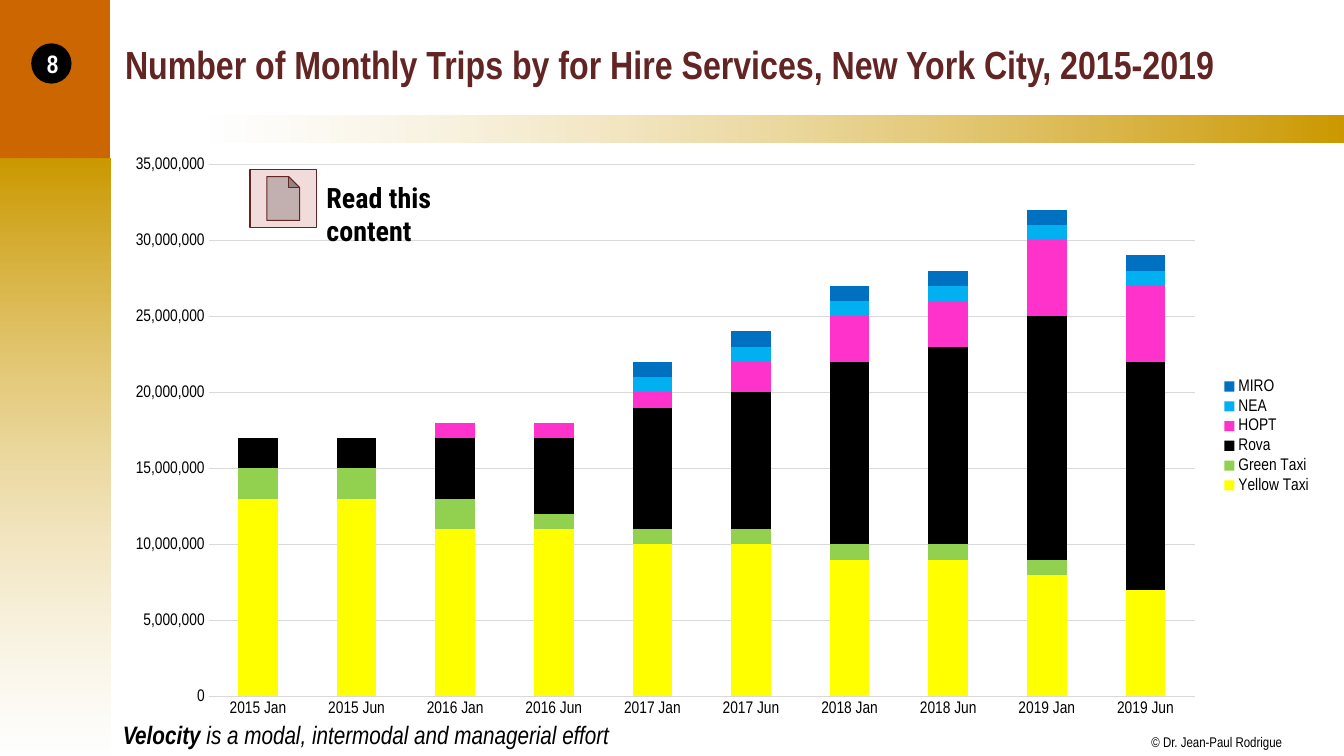
import pptx
import pptx.chart.data
import pptx.dml.color
import pptx.enum.chart
import pptx.enum.shapes
import pptx.enum.text
import pptx.oxml
import pptx.oxml.ns
import pptx.util
from pptx.dml.color import RGBColor
from pptx.util import Inches

MSO_SHAPE = pptx.enum.shapes.MSO_SHAPE
ALIGN = pptx.enum.text.PP_ALIGN
ANCHOR = pptx.enum.text.MSO_ANCHOR

BLACK = RGBColor(0x00, 0x00, 0x00)
WHITE = RGBColor(0xFF, 0xFF, 0xFF)
GOLD = RGBColor(0xCC, 0x99, 0x00)
ORANGE = RGBColor(0xCC, 0x66, 0x00)
MAROON = RGBColor(0x63, 0x25, 0x23)
ROSE = RGBColor(0xF2, 0xDC, 0xDB)
GRID = RGBColor(0xD9, 0xD9, 0xD9)
YELLOW = RGBColor(0xFF, 0xFF, 0x00)
GREEN = RGBColor(0x92, 0xD0, 0x50)
PINK = RGBColor(0xFF, 0x33, 0xCC)
SKY = RGBColor(0x00, 0xB0, 0xF0)
BLUE = RGBColor(0x00, 0x70, 0xC0)

FONT = "Arial Narrow"
MONTHS = [f"{year} {month}" for year in range(2015, 2020) for month in ("Jan", "Jun")]
MILLION_TRIPS = [
    ("Yellow Taxi", YELLOW, [13, 13, 11, 11, 10, 10, 9, 9, 8, 7]),
    ("Green Taxi", GREEN, [2, 2, 2, 1, 1, 1, 1, 1, 1, 0]),
    ("Rova", BLACK, [2, 2, 4, 5, 8, 9, 12, 13, 16, 15]),
    ("HOPT", PINK, [None, 0, 1, 1, 1, 2, 3, 3, 5, 5]),
    ("NEA", SKY, [None, 0, 0, 0, 1, 1, 1, 1, 1, 1]),
    ("MIRO", BLUE, [None, None, None, 0, 1, 1, 1, 1, 1, 1]),
]


def box(left, top, width, height):
    return Inches(left), Inches(top), Inches(width), Inches(height)


def format_font(font, size, color=BLACK, name=FONT, bold=False, italic=False):
    font.size = pptx.util.Pt(size)
    font.name = name
    font.bold = bold
    font.italic = italic
    font.color.rgb = color


def add_text(tf, text, size, align=ALIGN.LEFT, anchor=ANCHOR.TOP, wrap=True, **style):
    tf.word_wrap = wrap
    tf.auto_size = pptx.enum.text.MSO_AUTO_SIZE.NONE
    tf.vertical_anchor = anchor
    p = tf.paragraphs[0]
    p.alignment = align
    r = p.add_run()
    r.text = text
    format_font(r.font, size, **style)


def add_textbox(slide, bounds, text, size, **style):
    tf = slide.shapes.add_textbox(*bounds).text_frame
    add_text(tf, text, size, **style)
    return tf


def add_shape(slide, kind, bounds, color, line=None):
    sp = slide.shapes.add_shape(kind, *bounds)
    sp.shadow.inherit = False
    sp.fill.solid()
    sp.fill.fore_color.rgb = color
    if line is None:
        sp.line.fill.background()
    else:
        sp.line.color.rgb = line
        sp.line.width = pptx.util.Pt(0.75)
    return sp


def add_gradient(slide, bounds, colors, angle):
    sp = add_shape(slide, MSO_SHAPE.RECTANGLE, bounds, WHITE)
    sp.fill.gradient()
    sp.fill.gradient_angle = angle
    for stop, color, position in zip(sp.fill.gradient_stops, colors, (0, 1)):
        stop.color.rgb = color
        stop.position = position
    for clr in sp.element.spPr.iter(pptx.oxml.ns.qn("a:srgbClr")):
        if clr.get("val") == str(WHITE):
            alpha = clr.makeelement(pptx.oxml.ns.qn("a:alpha"), {"val": "50000"})
            clr.append(alpha)


def format_axis(axis):
    axis.major_tick_mark = axis.minor_tick_mark = pptx.enum.chart.XL_TICK_MARK.NONE
    format_font(axis.tick_labels.font, 12)


def format_line(line):
    line.color.rgb = GRID
    line.width = pptx.util.Pt(0.75)


def place_plot(chart, chart_bounds, plot_bounds):
    left, top, width, height = chart_bounds
    x, y, w, h = plot_bounds
    shares = ((x - left) / width, (y - top) / height, w / width, h / height)
    plot_area = chart.element.chart.plotArea
    for layout in plot_area.findall(pptx.oxml.ns.qn("c:layout")):
        plot_area.remove(layout)
    sizes = "".join(f'<c:{k} val="{v}"/>' for k, v in zip("xywh", shares))
    plot_area.insert(0, pptx.oxml.parse_xml(
        f'<c:layout {pptx.oxml.ns.nsdecls("c")}><c:manualLayout>'
        '<c:layoutTarget val="inner"/><c:xMode val="edge"/><c:yMode val="edge"/>'
        f'{sizes}</c:manualLayout></c:layout>'))


def add_trips_chart(slide, bounds, plot_bounds):
    data = pptx.chart.data.CategoryChartData(number_format="#,##0")
    data.categories = MONTHS
    for name, _, trips in MILLION_TRIPS:
        data.add_series(name, [None if t is None else t * 1000000 for t in trips])
    kind = pptx.enum.chart.XL_CHART_TYPE.COLUMN_STACKED
    chart = slide.shapes.add_chart(kind, *bounds, data).chart
    format_font(chart.font, 10)
    chart.has_title = False
    plot = chart.plots[0]
    plot.gap_width = 150
    plot.overlap = 100
    plot.vary_by_categories = False
    for series, (_, color, _) in zip(plot.series, MILLION_TRIPS):
        series.format.fill.solid()
        series.format.fill.fore_color.rgb = color
    format_axis(chart.category_axis)
    format_line(chart.category_axis.format.line)
    values = chart.value_axis
    format_axis(values)
    values.minimum_scale = 0
    values.maximum_scale = 35000000
    values.major_unit = 5000000
    values.tick_labels.number_format = "#,##0"
    values.tick_labels.number_format_is_linked = False
    values.format.line.fill.background()
    format_line(values.major_gridlines.format.line)
    chart.has_legend = True
    chart.legend.position = pptx.enum.chart.XL_LEGEND_POSITION.RIGHT
    chart.legend.include_in_layout = False
    format_font(chart.legend.font, 12)
    place_plot(chart, bounds, plot_bounds)


def main():
    prs = pptx.Presentation()
    prs.slide_width, prs.slide_height = Inches(13.33), Inches(7.5)
    slide = prs.slides.add_slide(prs.slide_layouts[5])

    add_gradient(slide, box(-0.02, 1.57, 1.12, 5.93), (GOLD, WHITE), 270)
    add_gradient(slide, box(2.09, 1.15, 11.25, 0.26), (WHITE, GOLD), 0)
    tf = add_textbox(slide, box(11.42, 7.28, 1.31, 0.17),
                     "© Dr. Jean-Paul Rodrigue", 10, wrap=False)
    tf.margin_left = tf.margin_right = tf.margin_top = tf.margin_bottom = 0
    add_shape(slide, MSO_SHAPE.RECTANGLE, box(-0.02, -0.01, 1.11, 1.58), ORANGE)

    title = slide.shapes.title
    title.left, title.top, title.width, title.height = box(1.14, 0.11, 11.97, 1.04)
    add_text(title.text_frame,
             "Number of Monthly Trips by for Hire Services, New York City, 2015-2019",
             28, anchor=ANCHOR.MIDDLE, color=MAROON, bold=True)

    add_trips_chart(slide, box(1.1, 1.43, 12.02, 5.79), box(2.07, 1.63, 9.78, 5.28))

    add_shape(slide, MSO_SHAPE.ACTION_BUTTON_DOCUMENT, box(2.48, 1.68, 0.66, 0.58),
              ROSE, MAROON)
    add_textbox(slide, box(3.14, 1.74, 1.86, 0.44), "Read this content", 20,
                name="Roboto Condensed", bold=True)

    badge = add_shape(slide, MSO_SHAPE.OVAL, box(0.31, 0.43, 0.4, 0.4), BLACK)
    add_text(badge.text_frame, "8", 18, align=ALIGN.CENTER, anchor=ANCHOR.MIDDLE,
             color=WHITE, bold=True)

    tf = add_textbox(slide, box(1.12, 7.09, 5.09, 0.4), "Velocity", 18,
                     wrap=False, bold=True, italic=True)
    add_text(tf, " is a modal, intermodal and managerial effort", 18,
             wrap=False, italic=True)
    prs.save("out.pptx")


if __name__ == "__main__":
    main()
